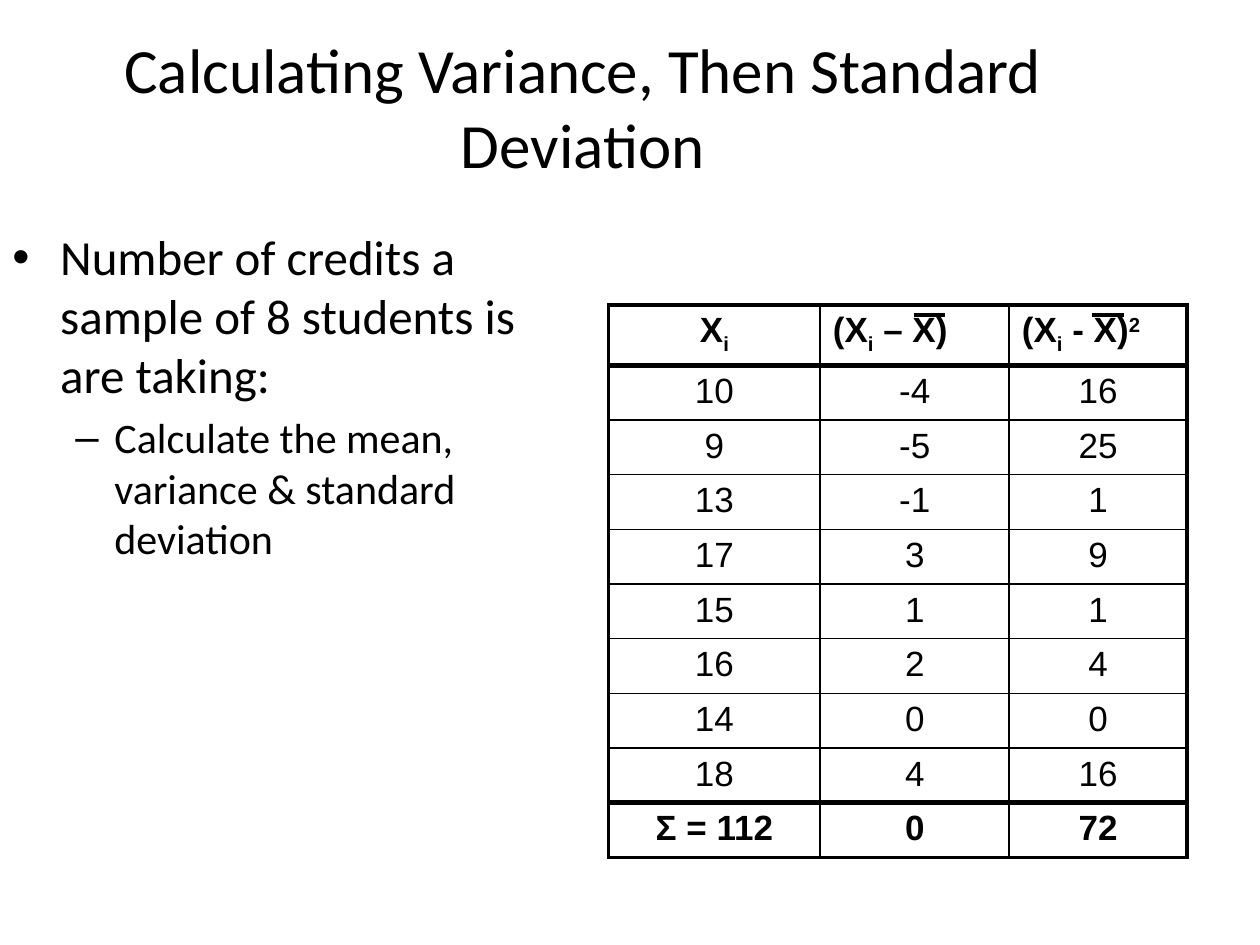
from lxml.etree import SubElement
from pptx import Presentation
from pptx.dml.color import RGBColor
from pptx.enum.shapes import MSO_CONNECTOR as Connector
from pptx.enum.text import MSO_ANCHOR as Anchor, PP_ALIGN as Align
from pptx.oxml import parse_xml
from pptx.oxml.ns import nsdecls, qn
from pptx.util import Inches, Pt

BLACK = "000000"
TITLE = "Calculating Variance, Then Standard Deviation"
BULLETS = [
    ("Number of credits a sample of 8 students is are taking:", 28, "•", 0.38, 0.38),
    ("Calculate the mean, variance & standard deviation", 24, "–", 0.81, 0.31),
]
HEADERS = [
    [("X", 0), ("i", -25)],
    [("(X", 0), ("i", -25), (" – X)", 0)],
    [("(X", 0), ("i", -25), (" - X)", 0), ("2", 30)],
]
CREDITS = [
    (10, -4, 16), (9, -5, 25), (13, -1, 1), (17, 3, 9),
    (15, 1, 1), (16, 2, 4), (14, 0, 0), (18, 4, 16),
]
TOTALS = ("Σ = 112", 0, 72)
COLUMN_WIDTHS = [1.68, 1.5, 1.41]
ROW_HEIGHTS = [0.45] + [0.41] * 5 + [0.43] * 3 + [0.41]
THIN, OUTER, RULE = 1, 2.25, 3
MEAN_BARS = [7.25, 8.67]
BAR_TOP, BAR_WIDTH = 2.5, 0.25


def color(value):
    """Turn a hex string into a colour."""
    return RGBColor.from_string(value)


def style(run, size, font, bold=False, baseline=0):
    """Format one run of text."""
    run.font.size = Pt(size)
    run.font.name = font
    run.font.bold = bold
    run.font.color.rgb = color(BLACK)
    if baseline:
        run.font._element.set("baseline", str(baseline * 1000))


def add_text(slide, left, top, width, height):
    """Add a wrapping text box and return its frame."""
    box = slide.shapes.add_textbox(*map(Inches, (left, top, width, height)))
    box.text_frame.word_wrap = True
    return box.text_frame


def add_title(slide):
    """Add the centred heading."""
    frame = add_text(slide, 0.5, 0.13, 8.25, 1.42)
    frame.vertical_anchor = Anchor.MIDDLE
    frame.text = TITLE
    paragraph = frame.paragraphs[0]
    paragraph.alignment = Align.CENTER
    style(paragraph.runs[0], 36, "Calibri")


def add_bullets(slide):
    """Add the two-level bullet list."""
    frame = add_text(slide, 0, 1.75, 4.5, 4.95)
    for level, (text, size, mark, margin, hanging) in enumerate(BULLETS):
        paragraph = frame.add_paragraph() if level else frame.paragraphs[0]
        paragraph.text = text
        paragraph.level = level
        paragraph.space_before = Pt(size * 0.2)
        style(paragraph.runs[0], size, "Calibri")
        properties = paragraph._p.get_or_add_pPr()
        properties.set("marL", str(Inches(margin)))
        properties.set("indent", str(-Inches(hanging)))
        SubElement(properties, qn("a:buFont")).set("typeface", "Arial")
        SubElement(properties, qn("a:buChar")).set("char", mark)


def set_borders(cell, **widths):
    """Draw the cell's borders, given in points by side."""
    properties = cell._tc.get_or_add_tcPr()
    for index, side in enumerate("LRTB"):
        properties.insert(index, parse_xml(
            f'<a:ln{side} {nsdecls("a")} w="{Pt(widths[side])}"><a:solidFill>'
            f'<a:srgbClr val="{BLACK}"/></a:solidFill></a:ln{side}>'))


def add_credit_table(slide):
    """Add the table of deviations and squared deviations."""
    body = [[[(str(value), 0)] for value in row] for row in CREDITS + [TOTALS]]
    rows = [HEADERS] + body
    last_row, last_column = len(rows) - 1, len(COLUMN_WIDTHS) - 1
    horizontal = [OUTER, RULE] + [THIN] * (last_row - 2) + [RULE, OUTER]
    vertical = [OUTER] + [THIN] * last_column + [OUTER]
    table = slide.shapes.add_table(
        len(rows), len(COLUMN_WIDTHS), Inches(4.83), Inches(2.42),
        Inches(sum(COLUMN_WIDTHS)), Inches(sum(ROW_HEIGHTS))).table
    table.first_row = table.horz_banding = False
    for column, width in zip(table.columns, COLUMN_WIDTHS):
        column.width = Inches(width)
    for r, (row, height) in enumerate(zip(rows, ROW_HEIGHTS)):
        table.rows[r].height = Inches(height)
        for c, pieces in enumerate(row):
            cell = table.cell(r, c)
            cell.fill.background()
            set_borders(cell, L=vertical[c], R=vertical[c + 1],
                        T=horizontal[r], B=horizontal[r + 1])
            paragraph = cell.text_frame.paragraphs[0]
            paragraph.alignment = Align.LEFT if r == 0 and c else Align.CENTER
            for text, baseline in pieces:
                run = paragraph.add_run()
                run.text = text
                style(run, 20, "Arial", r in (0, last_row), baseline)


def add_mean_bars(slide):
    """Add the bars over X that mark the mean."""
    for left in MEAN_BARS:
        bar = slide.shapes.add_connector(
            Connector.STRAIGHT, Inches(left), Inches(BAR_TOP),
            Inches(left + BAR_WIDTH), Inches(BAR_TOP))
        bar.line.color.rgb = color(BLACK)
        bar.line.width = Pt(2.25)
        SubElement(bar._element.spPr, qn("a:effectLst"))


def main():
    """Build and save the slide."""
    presentation = Presentation()
    presentation.slide_width, presentation.slide_height = Inches(10), Inches(7.5)
    slide = presentation.slides.add_slide(presentation.slide_layouts[6])
    add_title(slide)
    add_bullets(slide)
    add_credit_table(slide)
    add_mean_bars(slide)
    presentation.save("out.pptx")


if __name__ == "__main__":
    main()
